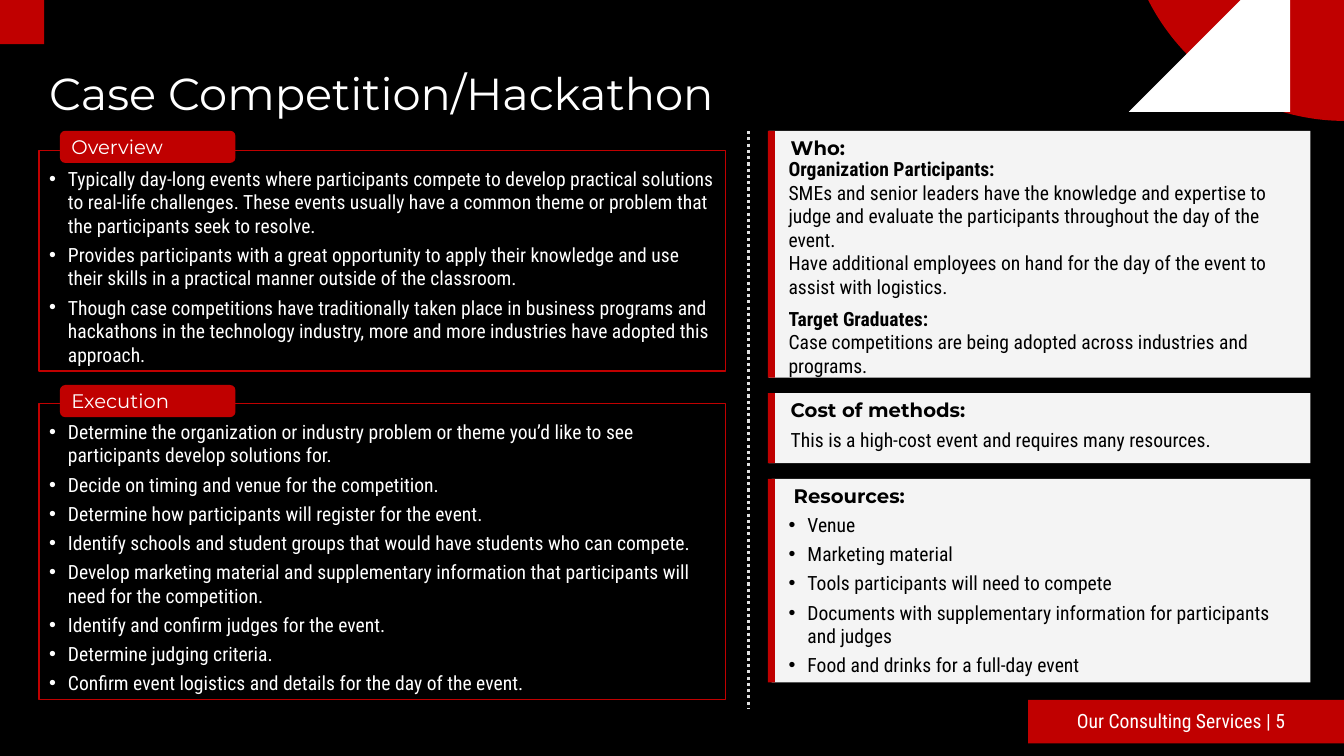
from lxml.etree import SubElement
from pptx import Presentation
from pptx.dml.color import RGBColor
from pptx.enum.dml import MSO_LINE
from pptx.enum.shapes import MSO_CONNECTOR, MSO_SHAPE as Preset
from pptx.enum.text import MSO_ANCHOR as Anchor, PP_ALIGN as Align
from pptx.oxml.ns import qn
from pptx.util import Pt

COLORS = {"red": "C00000", "black": "000000", "white": "FFFFFF",
          "card": "F4F4F4", "dots": "DFDFDF"}
HEADING, BODY = "Montserrat", "Roboto Condensed"
SLIDE_W, SLIDE_H = 960.5, 540


def rgb(name):
    return RGBColor.from_string(COLORS[name])


def write(frame, text, *, font=BODY, size=14, color="black", bold=False,
          bullet=False, indent=0, after=0, spacing=None):
    """Put text in the frame's first free paragraph."""
    first = frame.paragraphs[0]
    para = frame.add_paragraph() if first.runs else first
    para.alignment = Align.LEFT
    para.space_before, para.space_after = Pt(0), Pt(after)
    if spacing:
        para.line_spacing = Pt(spacing)
    props = para._p.get_or_add_pPr()
    if indent:
        props.set("marL", str(Pt(indent)))
    if bullet:
        para.space_before = para.space_after = Pt(2)
        props.set("marL", str(Pt(13.5)))
        props.set("indent", str(-Pt(13.5)))
        SubElement(props, qn("a:buFont"), typeface="Arial")
        SubElement(props, qn("a:buChar"), char="•")
    run = para.add_run()
    run.text = text
    run.font.name, run.font.size, run.font.bold = font, Pt(size), bold
    run.font.color.rgb = rgb(color)


class SlideBuilder:
    def __init__(self, deck):
        self.slide = deck.slides.add_slide(deck.slide_layouts[6])
        self.shapes = self.slide.shapes
        background = self.slide.background.fill
        background.solid()
        background.fore_color.rgb = rgb("black")

    def paint(self, shape, fill=None, line=None):
        shape.shadow.inherit = False
        if fill:
            shape.fill.solid()
            shape.fill.fore_color.rgb = rgb(fill)
        else:
            shape.fill.background()
        if line:
            shape.line.color.rgb = rgb(line)
            shape.line.width = Pt(1)
        else:
            shape.line.fill.background()

    def box(self, left, top, width, height, fill=None, line=None,
            preset=Preset.RECTANGLE, anchor=Anchor.TOP):
        shape = self.shapes.add_shape(
            preset, Pt(left), Pt(top), Pt(width), Pt(height))
        self.paint(shape, fill, line)
        shape.text_frame.word_wrap = True
        shape.text_frame.vertical_anchor = anchor
        return shape.text_frame

    def text(self, left, top, width, height):
        frame = self.shapes.add_textbox(
            Pt(left), Pt(top), Pt(width), Pt(height)).text_frame
        frame.word_wrap = True
        return frame

    def polygon(self, points, fill):
        start, *rest = [(Pt(x), Pt(y)) for x, y in points]
        outline = self.shapes.build_freeform(*start)
        outline.add_line_segments(rest, close=True)
        self.paint(outline.convert_to_shape(), fill)

    def dotted_line(self, x, top, bottom):
        line = self.shapes.add_connector(
            MSO_CONNECTOR.STRAIGHT, Pt(x), Pt(top), Pt(x), Pt(bottom))
        line.line.color.rgb = rgb("dots")
        line.line.width = Pt(2.25)
        line.line.dash_style = MSO_LINE.ROUND_DOT
        SubElement(line._element.spPr, qn("a:effectLst"))

    def section(self, label, top, height, tag_top, points):
        frame = self.box(28, top, 490.5, height, line="red",
                         anchor=Anchor.BOTTOM)
        for point in points:
            write(frame, point, color="white", bullet=True)
        tag = self.box(42.8, tag_top, 125.5, 23, fill="red",
                       preset=Preset.ROUNDED_RECTANGLE, anchor=Anchor.MIDDLE)
        write(tag, label, font=HEADING, color="white")

    def card(self, label, left, top, height, body, paragraphs):
        card = self.box(left, top, 936.5 - left, height, fill="card")
        write(card, label, font=HEADING, bold=True, indent=8.6)
        self.box(548.8, top, 5, height, fill="red")
        frame = self.text(*body)
        for text, style in paragraphs:
            write(frame, text, **style)


OVERVIEW = [
    "Typically day-long events where participants compete to develop practical solutions to real-life challenges. These events usually have a common theme or problem that the participants seek to resolve.",
    "Provides participants with a great opportunity to apply their knowledge and use their skills in a practical manner outside of the classroom.",
    "Though case competitions have traditionally taken place in business programs and hackathons in the technology industry, more and more industries have adopted this approach.",
]
EXECUTION = [
    "Determine the organization or industry problem or theme you’d like to see participants develop solutions for.",
    "Decide on timing and venue for the competition.",
    "Determine how participants will register for the event.",
    "Identify schools and student groups that would have students who can compete.",
    "Develop marketing material and supplementary information that participants will need for the competition.",
    "Identify and confirm judges for the event.",
    "Determine judging criteria.",
    "Confirm event logistics and details for the day of the event.",
]
WHO = [
    ("Organization Participants:", {"bold": True}),
    ("SMEs and senior leaders have the knowledge and expertise to judge and evaluate the participants throughout the day of the event.", {}),
    ("Have additional employees on hand for the day of the event to assist with logistics.", {"after": 6}),
    ("Target Graduates:", {"bold": True}),
    ("Case competitions are being adopted across industries and programs.", {}),
]
COST = [("This is a high-cost event and requires many resources.", {})]
RESOURCES = [(item, {"bullet": True}) for item in (
    "Venue",
    "Marketing material",
    "Tools participants will need to compete",
    "Documents with supplementary information for participants and judges",
    "Food and drinks for a full-day event",
)]


def main():
    deck = Presentation()
    deck.slide_width, deck.slide_height = Pt(SLIDE_W), Pt(SLIDE_H)
    page = SlideBuilder(deck)

    # Corner decoration and footer band
    page.box(803.5, -229, 315.4, 315.4, fill="red", preset=Preset.OVAL)
    page.box(734.8, 500, 450.7, 31, fill="red")
    page.polygon([(922, -35.3), (922, 79.9), (806.8, 79.9)], "white")
    page.box(-31.5, -31.5, 63, 63, fill="red")

    # Title
    title = page.text(28, 41.8, 875.5, 89.3)
    write(title, "Case Competition/Hackathon", font=HEADING, size=32,
          color="white", spacing=40)

    # Left column
    page.section("Overview", 107.3, 157.7, 93.4, OVERVIEW)
    page.section("Execution", 288.2, 211.5, 275, EXECUTION)

    # Right column
    page.card("Who:", 549.4, 93.4, 176.4, (556.5, 108.7, 383.8, 149), WHO)
    page.card("Cost of methods:", 549.4, 280.8, 50,
              (558, 302.4, 371.5, 24.5), COST)
    page.card("Resources:", 551.5, 342, 145.4,
              (556.5, 362.9, 377.3, 125.3), RESOURCES)

    # Column divider and footer text
    page.dotted_line(535.2, 93.6, 506.2)
    footer = page.text(762.5, 502.6, 170, 24.5)
    write(footer, "Our Consulting Services | 5", color="white")

    deck.save("out.pptx")


if __name__ == "__main__":
    main()
